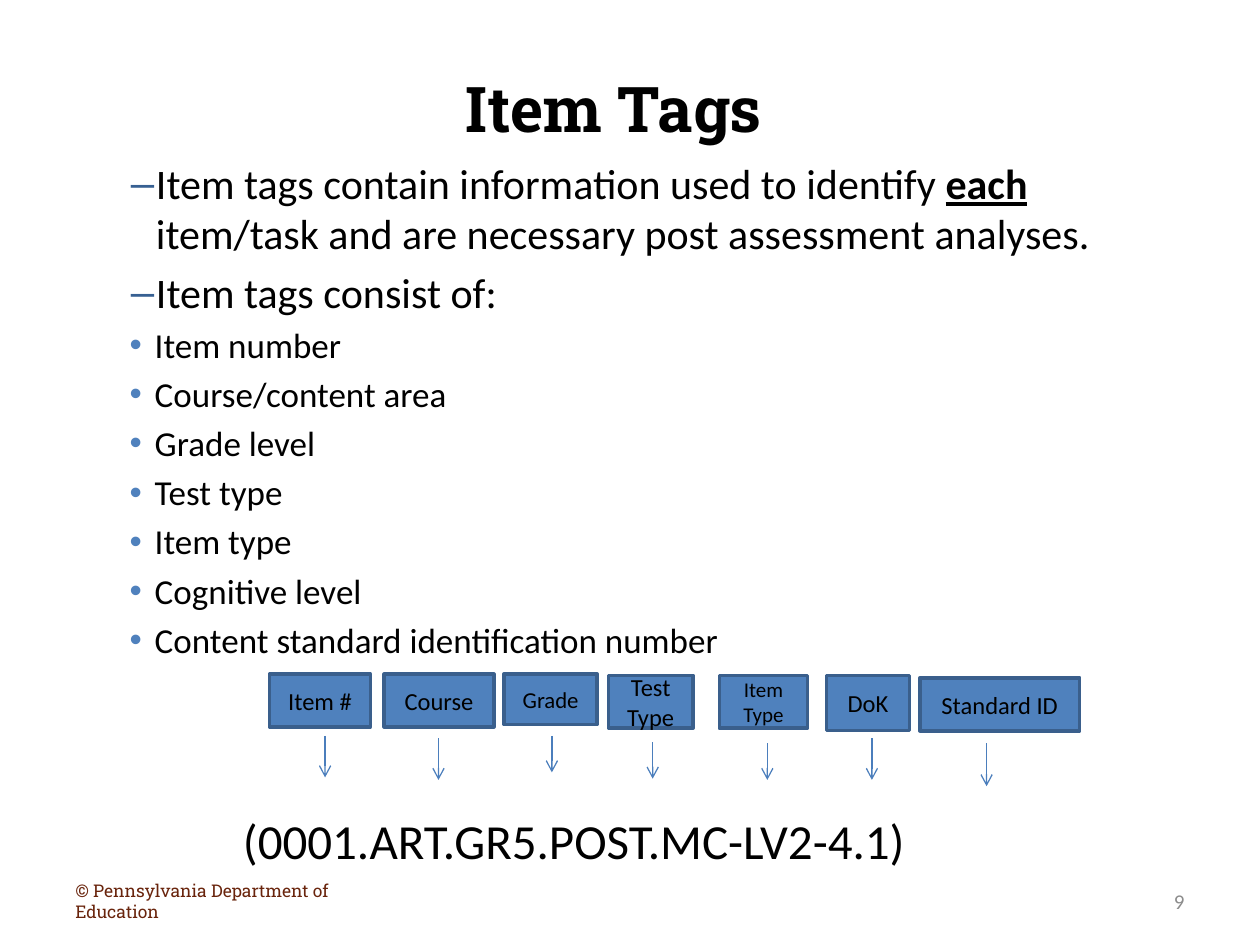
from dataclasses import dataclass

from lxml import etree
from pptx import Presentation
from pptx.dml.color import RGBColor
from pptx.enum.shapes import MSO_CONNECTOR, MSO_SHAPE
from pptx.enum.text import MSO_ANCHOR, PP_ALIGN
from pptx.oxml.ns import qn
from pptx.util import Inches, Pt

RECT = MSO_SHAPE.RECTANGLE
STRAIGHT = MSO_CONNECTOR.STRAIGHT
MIDDLE, TOP = MSO_ANCHOR.MIDDLE, MSO_ANCHOR.TOP
LEFT, CENTER, RIGHT = PP_ALIGN.LEFT, PP_ALIGN.CENTER, PP_ALIGN.RIGHT


@dataclass(frozen=True)
class Theme:
    body_font: str = "Calibri"
    head_font: str = "Roboto Slab"
    black: str = "000000"
    blue: str = "4F81BD"
    dash: str = "376092"
    border: str = "3A5F8C"
    arrow: str = "4B7EBC"
    brown: str = "69240C"
    gray: str = "8C8C8C"
    title: int = 36
    code: int = 28
    statement: int = 24
    item: int = 20
    number: int = 12
    footer: int = 10


THEME = Theme()

STATEMENTS = [
    [("Item tags contain information used to identify ", False), ("each", True),
     (" item/task and are necessary post assessment analyses.", False)],
    [("Item tags consist of:", False)],
]
ITEMS = ["Item number", "Course/content area", "Grade level", "Test type",
         "Item type", "Cognitive level", "Content standard identification number"]

# Label, size, box (left, top, width, height), arrow (x, top, bottom)
TAGS = [
    ("Item #", 14, (2.14, 5.35, 0.8, 0.42), (2.58, 5.84, 6.17)),
    ("Course", 14, (3.05, 5.35, 0.87, 0.42), (3.48, 5.86, 6.19)),
    ("Grade", 13, (4, 5.35, 0.74, 0.4), (4.38, 5.84, 6.13)),
    ("Test Type", 14, (4.83, 5.36, 0.67, 0.42), (5.18, 5.89, 6.18)),
    ("Item Type", 12, (5.71, 5.36, 0.7, 0.42), (6.09, 5.9, 6.19)),
    ("DoK", 14, (6.56, 5.36, 0.66, 0.44), (6.92, 5.86, 6.19)),
    ("Standard ID", 14, (7.3, 5.38, 1.27, 0.42), (7.83, 5.9, 6.24)),
]


def rgb(color):
    return RGBColor.from_string(color)


def style_run(r, size, color=THEME.black, font=THEME.body_font, bold=False):
    r.font.size = Pt(size)
    r.font.name = font
    r.font.bold = bold
    r.font.color.rgb = rgb(color)


def add_text(slide, box, text, size, align=LEFT, anchor=TOP, **style):
    tf = slide.shapes.add_textbox(*map(Inches, box)).text_frame
    tf.word_wrap = True
    tf.vertical_anchor = anchor
    p = tf.paragraphs[0]
    p.text = text
    p.alignment = align
    style_run(p.runs[0], size, **style)


def set_bullet(p, char, color, margin, hang):
    pPr = p._p.get_or_add_pPr()
    pPr.set("marL", str(Inches(margin)))
    pPr.set("indent", str(-Inches(hang)))
    clr = etree.SubElement(pPr, qn("a:buClr"))
    etree.SubElement(clr, qn("a:srgbClr"), val=color)
    etree.SubElement(pPr, qn("a:buFont"), typeface="Arial")
    etree.SubElement(pPr, qn("a:buChar"), char=char)


def add_body(slide, box):
    tf = slide.shapes.add_textbox(*map(Inches, box)).text_frame
    tf.word_wrap = True
    rows = [(parts, THEME.statement, "–", THEME.dash, 0.81) for parts in STATEMENTS]
    rows += [([(item, False)], THEME.item, "•", THEME.blue, 0.8) for item in ITEMS]
    for i, (parts, size, char, color, margin) in enumerate(rows):
        p = tf.add_paragraph() if i else tf.paragraphs[0]
        p.space_before = Pt(size * 0.2)
        set_bullet(p, char, color, margin, 0.2)
        for text, strong in parts:
            r = p.add_run()
            r.text = text
            style_run(r, size, bold=strong)
            r.font.underline = strong


def add_tag(slide, label, size, box):
    sp = slide.shapes.add_shape(RECT, *map(Inches, box))
    sp.shadow.inherit = False
    sp.fill.solid()
    sp.fill.fore_color.rgb = rgb(THEME.blue)
    sp.line.color.rgb = rgb(THEME.border)
    sp.line.width = Pt(2)
    tf = sp.text_frame
    tf.word_wrap = True
    tf.vertical_anchor = MIDDLE
    p = tf.paragraphs[0]
    p.text = label
    p.alignment = CENTER
    style_run(p.runs[0], size)


def add_arrow(slide, x, top, bottom):
    cn = slide.shapes.add_connector(STRAIGHT, Inches(x), Inches(top),
                                    Inches(x), Inches(bottom))
    cn.line.color.rgb = rgb(THEME.arrow)
    cn.line.width = Pt(0.75)
    etree.SubElement(cn.line._get_or_add_ln(), qn("a:tailEnd"), type="arrow")
    etree.SubElement(cn._element.spPr, qn("a:effectLst"))


def add_tag_diagram(slide, code_box):
    for label, size, box, arrow in TAGS:
        add_tag(slide, label, size, box)
        add_arrow(slide, *arrow)
    add_text(slide, code_box, "(0001.ART.GR5.POST.MC-LV2-4.1)", THEME.code)


def add_footer(slide, left_box, right_box):
    add_text(slide, left_box, "© Pennsylvania Department of Education", THEME.footer,
             anchor=MIDDLE, color=THEME.brown, font=THEME.head_font)
    add_text(slide, right_box, "9", THEME.number, align=RIGHT, anchor=MIDDLE,
             color=THEME.gray)


def main():
    prs = Presentation()
    prs.slide_width, prs.slide_height = Inches(10), Inches(7.5)
    slide = prs.slides.add_slide(prs.slide_layouts[6])

    # Title and bulleted text
    add_text(slide, (0.33, 0.5, 9.08, 0.75), "Item Tags", THEME.title,
             align=CENTER, font=THEME.head_font, bold=True)
    add_body(slide, (0.33, 1.2, 9.17, 4.1))

    # Tag boxes pointing at the sample code
    add_tag_diagram(slide, (1.83, 6.38, 6, 0.57))

    # Footer
    add_footer(slide, (0.5, 6.95, 2.33, 0.4), (7.17, 6.95, 2.33, 0.4))
    prs.save("out.pptx")


if __name__ == "__main__":
    main()
